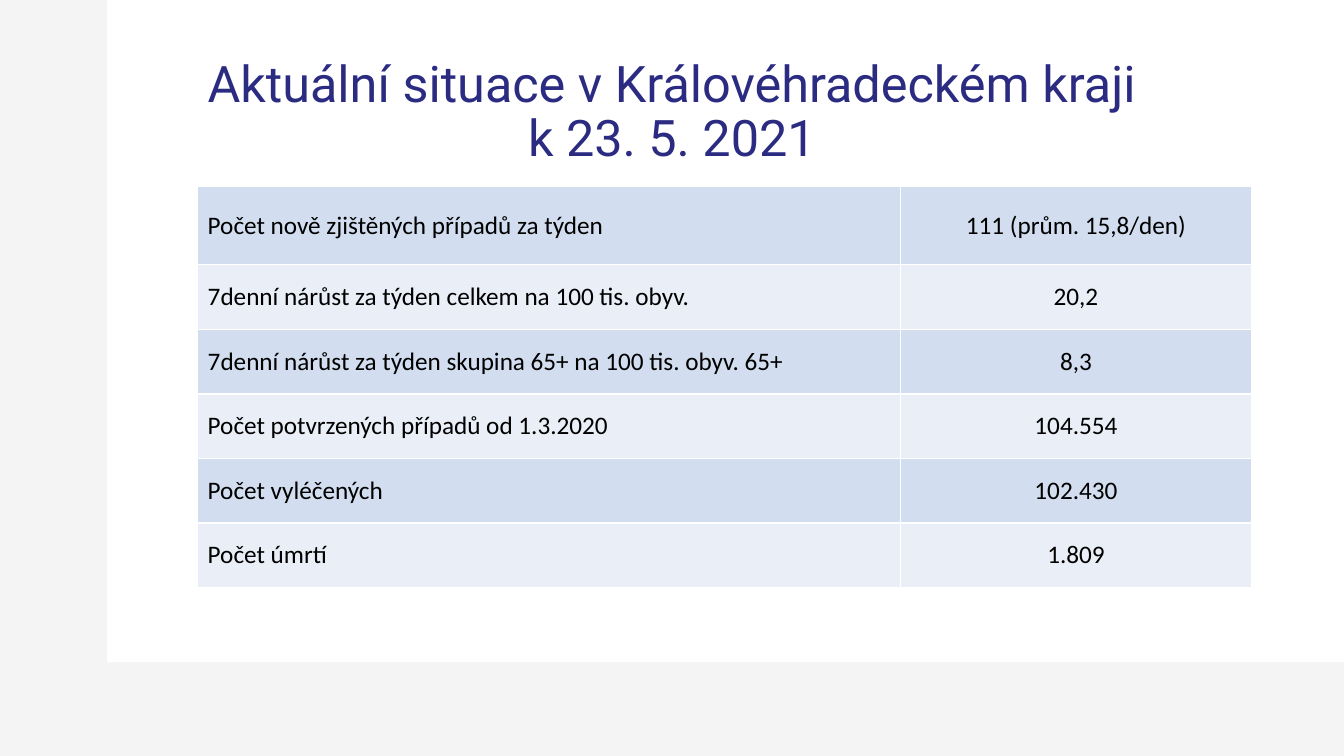
import dataclasses

import lxml.etree
import pptx
import pptx.dml.color
import pptx.enum.shapes
import pptx.enum.text
import pptx.oxml.ns
import pptx.slide
import pptx.table
import pptx.text.text
import pptx.util

Pt = pptx.util.Pt
ALIGN = pptx.enum.text.PP_ALIGN
ANCHOR = pptx.enum.text.MSO_ANCHOR

COLORS = {
    "backdrop": "F4F4F4",
    "panel": "FFFFFF",
    "title": "2B2B82",
    "text": "000000",
    "border": "FFFFFF",
    "band_dark": "D2DEEF",
    "band_light": "EAEFF7",
}


@dataclasses.dataclass(frozen=True)
class Indicator:
    label: str
    value: str
    height: float = 46.1


TITLE_LINES = ["Aktuální situace v Královéhradeckém kraji", "k 23. 5. 2021"]
INDICATORS = [
    Indicator("Počet nově zjištěných případů za týden", "111 (prům. 15,8/den)", 56),
    Indicator("7denní nárůst za týden celkem na 100 tis. obyv.", "20,2"),
    Indicator("7denní nárůst za týden skupina 65+ na 100 tis. obyv. 65+", "8,3"),
    Indicator("Počet potvrzených případů od 1.3.2020", "104.554"),
    Indicator("Počet vyléčených", "102.430"),
    Indicator("Počet úmrtí", "1.809"),
]
COLUMN_WIDTHS = [501.8, 251.2]


def rgb(name: str) -> pptx.dml.color.RGBColor:
    return pptx.dml.color.RGBColor.from_string(COLORS[name])


def add_run(p: pptx.text.text._Paragraph, text: str, font: str, size: float, color: str) -> None:
    r = p.add_run()
    r.text = text
    r.font.name = font
    r.font.size = Pt(size)
    r.font.color.rgb = rgb(color)


def add_panel(s: pptx.slide.Slide) -> None:
    sp = s.shapes.add_shape(
        pptx.enum.shapes.MSO_SHAPE.RECTANGLE, Pt(76.5), Pt(0), Pt(883.5), Pt(473)
    )
    sp.shadow.inherit = False
    sp.fill.solid()
    sp.fill.fore_color.rgb = rgb("panel")
    sp.line.fill.background()


def add_title(s: pptx.slide.Slide) -> None:
    sp = s.shapes.add_textbox(Pt(66), Pt(28.8), Pt(828), Pt(104.4))
    tf = sp.text_frame
    tf.word_wrap = True
    tf.vertical_anchor = ANCHOR.MIDDLE
    p = tf.paragraphs[0]
    p.alignment = ALIGN.CENTER
    p.line_spacing = 0.9
    for i, line in enumerate(TITLE_LINES):
        if i:
            p.add_line_break()
        add_run(p, line, "Roboto", 36, "title")


def add_borders(cell: pptx.table._Cell) -> None:
    qn = pptx.oxml.ns.qn
    props = cell._tc.get_or_add_tcPr()
    for side in ("a:lnL", "a:lnR", "a:lnT", "a:lnB"):
        ln = lxml.etree.SubElement(props, qn(side), w=str(Pt(1)))
        fill = lxml.etree.SubElement(ln, qn("a:solidFill"))
        lxml.etree.SubElement(fill, qn("a:srgbClr"), val=COLORS["border"])


def fill_cell(cell: pptx.table._Cell, text: str, align: ALIGN, band: str) -> None:
    add_borders(cell)
    cell.fill.solid()
    cell.fill.fore_color.rgb = rgb(band)
    cell.vertical_anchor = ANCHOR.MIDDLE
    p = cell.text_frame.paragraphs[0]
    p.alignment = align
    add_run(p, text, "Calibri", 18, "text")


def add_indicators(s: pptx.slide.Slide) -> None:
    height = sum(item.height for item in INDICATORS)
    frame = s.shapes.add_table(
        len(INDICATORS), len(COLUMN_WIDTHS),
        Pt(141.2), Pt(133.2), Pt(sum(COLUMN_WIDTHS)), Pt(height),
    )
    table = frame.table
    table.first_row = False
    table.horz_banding = False
    for column, width in zip(table.columns, COLUMN_WIDTHS):
        column.width = Pt(width)
    for i, item in enumerate(INDICATORS):
        table.rows[i].height = Pt(item.height)
        band = "band_light" if i % 2 else "band_dark"
        fill_cell(table.cell(i, 0), item.label, ALIGN.LEFT, band)
        fill_cell(table.cell(i, 1), item.value, ALIGN.CENTER, band)


def main() -> None:
    prs = pptx.Presentation()
    prs.slide_width = Pt(960)
    prs.slide_height = Pt(540)
    s = prs.slides.add_slide(prs.slide_layouts[6])
    s.background.fill.solid()
    s.background.fill.fore_color.rgb = rgb("backdrop")
    add_panel(s)
    add_title(s)
    add_indicators(s)
    prs.save("out.pptx")


if __name__ == "__main__":
    main()
